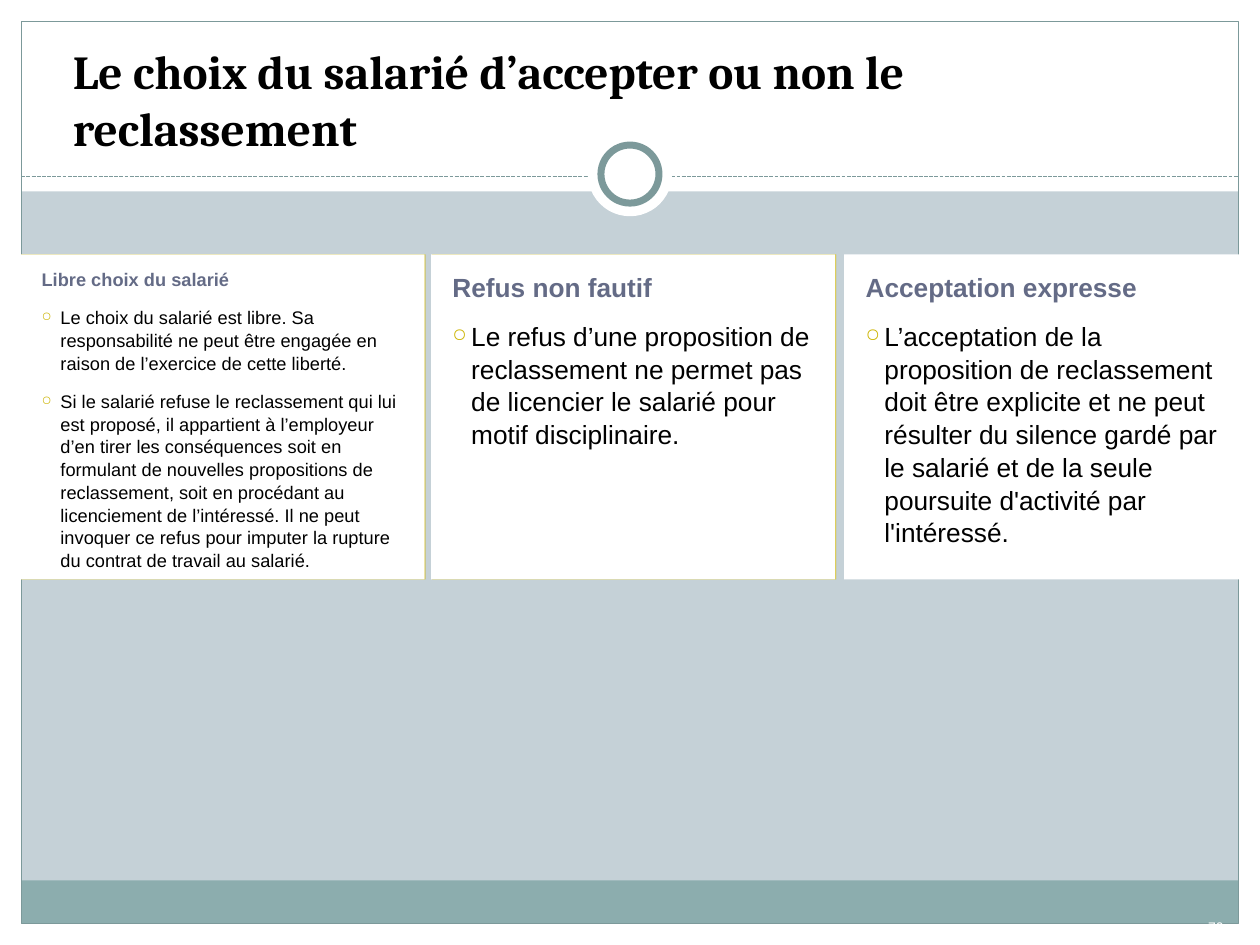
from dataclasses import dataclass

from lxml import etree
from pptx import Presentation
from pptx import util as u
from pptx.dml.color import RGBColor
from pptx.enum import dml, shapes, text
from pptx.oxml import ns

Cm, Pt = u.Cm, u.Pt

WHITE = RGBColor(0xFF, 0xFF, 0xFF)
BLACK = RGBColor(0x00, 0x00, 0x00)
MIST = RGBColor(0xC5, 0xD1, 0xD7)
TEAL = RGBColor(0x8C, 0xAD, 0xAE)
EDGE = RGBColor(0x7C, 0x99, 0x9A)
SLATE = RGBColor(0x64, 0x6B, 0x86)
GOLD = RGBColor(0xCC, 0xB4, 0x00)

RECT = shapes.MSO_SHAPE.RECTANGLE
OVAL = shapes.MSO_SHAPE.OVAL
WIDTH, HEIGHT = 25.4, 19.05
BORDER = 0.43
CARD_TOP, CARD_HEIGHT = 5.13, 6.55


@dataclass
class Card:
    left: float
    width: float
    heading: str
    points: list[str]
    size: float = 15
    heading_spacing: float = 0.9
    right_inset: float = 0.41
    shadow: bool = True


CARDS = [
    Card(0.41, 8.15, "Libre choix du salarié", [
        "Le choix du salarié est libre. Sa responsabilité ne peut être engagée "
        "en raison de l’exercice de cette liberté.",
        "Si le salarié refuse le reclassement qui lui est proposé, il appartient "
        "à l’employeur d’en tirer les conséquences soit en formulant de nouvelles "
        "propositions de reclassement, soit en procédant au licenciement de "
        "l’intéressé. Il ne peut invoquer ce refus pour imputer la rupture du "
        "contrat de travail au salarié.",
    ], size=10.4, heading_spacing=0.7),
    Card(8.69, 8.15, "Refus non fautif", [
        "Le refus d’une proposition de reclassement ne permet pas de licencier "
        "le salarié pour motif disciplinaire.",
    ]),
    Card(17.02, 8.0, "Acceptation expresse", [
        "L’acceptation de la proposition de reclassement doit être explicite et "
        "ne peut résulter du silence gardé par le salarié et de la seule "
        "poursuite d'activité par l'intéressé.",
    ], right_inset=0.25, shadow=False),
]


def add_xml(parent, tag: str, **attrs):
    return etree.SubElement(parent, ns.qn(tag), {k: str(v) for k, v in attrs.items()})


def add_block(s, kind, left: float, top: float, width: float, height: float,
              fill=WHITE, line=None, weight: float = 0.75):
    sp = s.shapes.add_shape(kind, Cm(left), Cm(top), Cm(width), Cm(height))
    sp.shadow.inherit = False
    if fill is None:
        sp.fill.background()
    else:
        sp.fill.solid()
        sp.fill.fore_color.rgb = fill
    if line is None:
        sp.line.fill.background()
    else:
        sp.line.color.rgb = line
        sp.line.width = Pt(weight)
    return sp


def setup_frame(tf, insets, anchor):
    tf.word_wrap = True
    tf.vertical_anchor = anchor
    tf.margin_left, tf.margin_top, tf.margin_right, tf.margin_bottom = map(Cm, insets)


def write(tf, content: str, *, size: float, font="Arial", color=BLACK, bold=False,
          align=text.PP_ALIGN.LEFT, spacing: float = 1.0, before: float = 0,
          margin: float = 0, bullet: bool = False):
    p = tf.paragraphs[0] if not tf.text else tf.add_paragraph()
    p.alignment = align
    p.line_spacing = spacing
    p.space_before = Pt(before)
    r = p.add_run()
    r.text = content
    r.font.name, r.font.size, r.font.bold = font, Pt(size), bold
    r.font.color.rgb = color
    pr = p._p.get_or_add_pPr()
    pr.set("marL", str(Cm(margin)))
    pr.set("indent", str(Cm(-0.38) if bullet else 0))
    if bullet:
        add_xml(add_xml(pr, "a:buClr"), "a:srgbClr", val=GOLD)
        add_xml(pr, "a:buSzPct", val=70000)
        add_xml(pr, "a:buChar", char="○")


def add_textbox(s, left: float, top: float, width: float, height: float,
                inset: float, anchor):
    tf = s.shapes.add_textbox(Cm(left), Cm(top), Cm(width), Cm(height)).text_frame
    setup_frame(tf, (inset, 0.13, inset, 0.13), anchor)
    return tf


def add_card(s, card: Card):
    sp = add_block(s, RECT, card.left, CARD_TOP, card.width, CARD_HEIGHT)
    if card.shadow:
        effects = sp._element.spPr.find(ns.qn("a:effectLst"))
        shadow = add_xml(effects, "a:outerShdw", blurRad=0, dist=Pt(0.5), dir=0)
        add_xml(shadow, "a:srgbClr", val=GOLD)
    tf = sp.text_frame
    setup_frame(tf, (0.25, 0.41, card.right_inset, 0.41), text.MSO_ANCHOR.TOP)
    write(tf, card.heading, size=card.size, color=SLATE, bold=True,
          spacing=card.heading_spacing, before=18, margin=0.18)
    for point in card.points:
        write(tf, point, size=card.size, spacing=1.04, before=9, margin=0.56, bullet=True)


def add_backdrop(s):
    s.background.fill.solid()
    s.background.fill.fore_color.rgb = MIST
    inner = WIDTH - 2 * BORDER

    # White margins and header, then the footer band and frame
    add_block(s, RECT, 0, HEIGHT - BORDER, WIDTH, BORDER)
    add_block(s, RECT, 0, 0, WIDTH, 3.86)
    for left in (0, WIDTH - BORDER):
        add_block(s, RECT, left, 0, BORDER, HEIGHT)
    add_block(s, RECT, BORDER, 17.75, inner, 0.86, fill=TEAL)
    add_block(s, RECT, BORDER, BORDER, inner, HEIGHT - 2 * BORDER, fill=None, line=EDGE)

    # Dashed rule under the title
    rule = s.shapes.add_connector(shapes.MSO_CONNECTOR.STRAIGHT, Cm(BORDER), Cm(3.56),
                                  Cm(WIDTH - BORDER), Cm(3.56))
    rule.line.color.rgb = EDGE
    rule.line.width = Pt(0.75)
    rule.line.dash_style = dml.MSO_LINE.SQUARE_DOT
    add_xml(rule._element.spPr, "a:effectLst")

    # Ring centred on the rule
    for size, line in ((1.7, None), (1.17, EDGE)):
        add_block(s, OVAL, (WIDTH - size) / 2, 3.51 - size / 2, size, size,
                  line=line, weight=4)


def main():
    prs = Presentation()
    prs.slide_width, prs.slide_height = Cm(WIDTH), Cm(HEIGHT)
    s = prs.slides.add_slide(prs.slide_layouts[6])
    add_backdrop(s)

    # Title
    tf = add_textbox(s, 1.22, 0.71, 22.43, 2.57, 0.25, text.MSO_ANCHOR.BOTTOM)
    write(tf, "Le choix du salarié d’accepter ou non le reclassement",
          size=27, font="Cambria", bold=True)

    # Three columns
    for card in CARDS:
        add_card(s, card)

    # Page number
    tf = add_textbox(s, 23.85, 18.31, 1.32, 0.74, 0.13, text.MSO_ANCHOR.MIDDLE)
    write(tf, "70", size=7.9, color=WHITE, align=text.PP_ALIGN.CENTER)

    prs.save("out.pptx")


if __name__ == "__main__":
    main()
